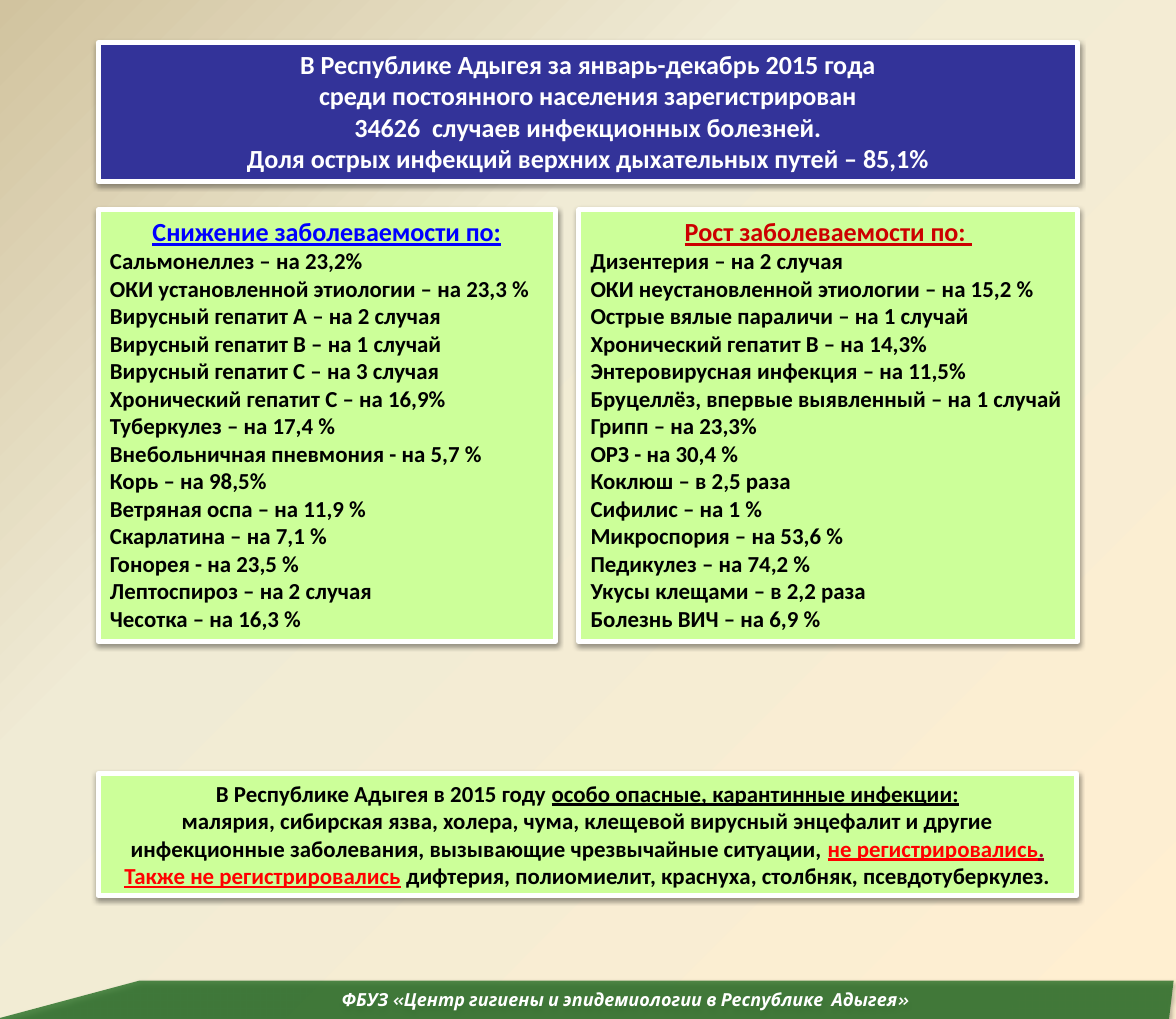
from lxml import etree
from pptx import Presentation
from pptx.dml.color import RGBColor
from pptx.enum import text as txt
from pptx.oxml import parse_xml
from pptx.oxml.ns import qn, nsdecls
from pptx.util import Cm, Pt

MID, LEFT = txt.PP_ALIGN.CENTER, txt.PP_ALIGN.LEFT
GREEN, BLACK, RED, WHITE = "CCFF99", "000000", "FF0000", "FFFFFF"


def style(shape, fill, shade=38, dist=1.6):
    """Give a shape its fill and a soft shadow straight below it."""
    shape.fill.solid()
    shape.fill.fore_color.rgb = RGBColor.from_string(fill)
    shape.shadow.inherit = False
    glow = shape._element.spPr.find(qn("a:effectLst"))
    cast = etree.SubElement(glow, qn("a:outerShdw"), blurRad=str(Pt(3.1)),
                            dist=str(Pt(dist)), dir="5400000", rotWithShape="0")
    tint = etree.SubElement(cast, qn("a:srgbClr"), val=BLACK)
    etree.SubElement(tint, qn("a:alpha"), val=str(shade * 1000))


def write(frame, lines, anchor=txt.MSO_ANCHOR.TOP):
    """Fill a frame with lines of (alignment, runs); a run is (text, size, colour, formats)."""
    frame.word_wrap = True
    frame.auto_size = txt.MSO_AUTO_SIZE.NONE
    frame.vertical_anchor = anchor
    for i, (align, runs) in enumerate(lines):
        para = frame.add_paragraph() if i else frame.paragraphs[0]
        para.alignment = align
        para.line_spacing = 1.0
        para.space_before = para.space_after = Pt(0)
        props = para._p.get_or_add_pPr()
        props.set("marL", "0")
        props.set("indent", "0")
        etree.SubElement(props, qn("a:buNone"))
        for words, size, color, extra in runs:
            run = para.add_run()
            run.text = words
            look = {"name": "Calibri", "size": Pt(size), "bold": True, **extra}
            for key, value in look.items():
                setattr(run.font, key, value)
            run.font.color.rgb = RGBColor.from_string(color)


deck = Presentation()
deck.slide_width, deck.slide_height = Cm(25.4), Cm(22)
slide = deck.slides.add_slide(deck.slide_layouts[3])
title, fall, rise = slide.placeholders

# Background
stops = "".join(f'<a:gs pos="{pos}000"><a:srgbClr val="{color}"/></a:gs>'
                for pos, color in [(0, "FFEFD1"), (65, "F0EBD5"), (100, "D1C39F")])
back = parse_xml(f'<p:bg {nsdecls("p", "a")}><p:bgPr><a:gradFill rotWithShape="1">'
                 f'<a:gsLst>{stops}</a:gsLst><a:lin ang="13500000" scaled="0"/>'
                 '</a:gradFill><a:effectLst/></p:bgPr></p:bg>')
slide._element.cSld.insert(0, back)

# Framed boxes
note = slide.shapes.add_textbox(0, 0, 0, 0)
boxes = [(title, 2.12, 0.92, 21.16, 3, "333399"),
         (fall, 2.12, 4.53, 9.88, 9.32, GREEN),
         (rise, 12.5, 4.53, 10.78, 9.32, GREEN),
         (note, 2.12, 16.7, 21.14, 2.64, GREEN)]
for box, left, top, width, height, fill in boxes:
    box.left, box.top, box.width, box.height = map(Cm, (left, top, width, height))
    box.line.color.rgb = RGBColor.from_string(WHITE)
    box.line.width = Pt(3)
    style(box, fill)

# Title
heads = ["В Республике Адыгея за январь-декабрь 2015 года",
         "среди постоянного населения зарегистрирован",
         "34626  случаев инфекционных болезней.",
         "Доля острых инфекций верхних дыхательных путей – 85,1%"]
write(title.text_frame, [(MID, [(head, 16, WHITE, {})]) for head in heads])

# Lists of falling and rising diseases
falls = ["Сальмонеллез – на 23,2%", "ОКИ установленной этиологии – на 23,3 %",
         "Вирусный гепатит А – на 2 случая", "Вирусный гепатит В – на 1 случай",
         "Вирусный гепатит С – на 3 случая", "Хронический гепатит С – на 16,9%",
         "Туберкулез – на 17,4 %", "Внебольничная пневмония - на 5,7 %",
         "Корь – на 98,5%", "Ветряная оспа – на 11,9 %", "Скарлатина – на 7,1 %",
         "Гонорея - на 23,5 %", "Лептоспироз – на 2 случая", "Чесотка – на 16,3 %"]
rises = ["Дизентерия – на 2 случая", "ОКИ неустановленной этиологии – на 15,2 %",
         "Острые вялые параличи – на 1 случай", "Хронический гепатит В – на 14,3%",
         "Энтеровирусная инфекция – на 11,5%",
         "Бруцеллёз, впервые выявленный – на 1 случай", "Грипп – на 23,3%",
         "ОРЗ - на 30,4 %", "Коклюш – в 2,5 раза", "Сифилис – на 1 %",
         "Микроспория – на 53,6 %", "Педикулез – на 74,2 %",
         "Укусы клещами – в 2,2 раза", "Болезнь ВИЧ – на 6,9 %"]
under = {"underline": True}
for box, head, color, items in [
        (fall, "Снижение заболеваемости по:", "0000FF", falls),
        (rise, "Рост заболеваемости по: ", "CC0000", rises)]:
    write(box.text_frame, [(MID, [(head, 16, color, under)])]
          + [(LEFT, [(item, 14, BLACK, {})]) for item in items])

# Note on dangerous infections
write(note.text_frame, [
    (MID, [("В Республике Адыгея в 2015 году ", 14, BLACK, {}),
           ("особо опасные, карантинные инфекции:", 14, BLACK, under)]),
    (MID, [("малярия, сибирская язва, холера, чума, клещевой вирусный энцефалит и другие "
            "инфекционные заболевания, вызывающие чрезвычайные ситуации, ", 14, BLACK, {}),
           ("не регистрировались", 14, RED, under), (".", 14, "A50021", under)]),
    (MID, [("Также не регистрировались", 14, RED, under),
           (" дифтерия, полиомиелит, краснуха, столбняк, псевдотуберкулез.", 14, BLACK, {})])])

# Footer band
pen = slide.shapes.build_freeform(Cm(-0.08), Cm(22))
pen.add_line_segments([(Cm(x), Cm(y)) for x, y in
                       [(3.02, 21.17), (25.35, 21.17), (25.25, 22)]], close=True)
band = pen.convert_to_shape()
band.line.fill.background()
style(band, "196619", 35, 1.8)
tint = band._element.spPr.find(qn("a:solidFill"))[0]
etree.SubElement(tint, qn("a:alpha"), val="75000")
band.text_frame.margin_left = Cm(2)
write(band.text_frame, [(MID, [("ФБУЗ «Центр гигиены и эпидемиологии в Республике  Адыгея»",
                                11, WHITE, {"name": "Karla", "italic": True})])],
      txt.MSO_ANCHOR.MIDDLE)

deck.save("out.pptx")
